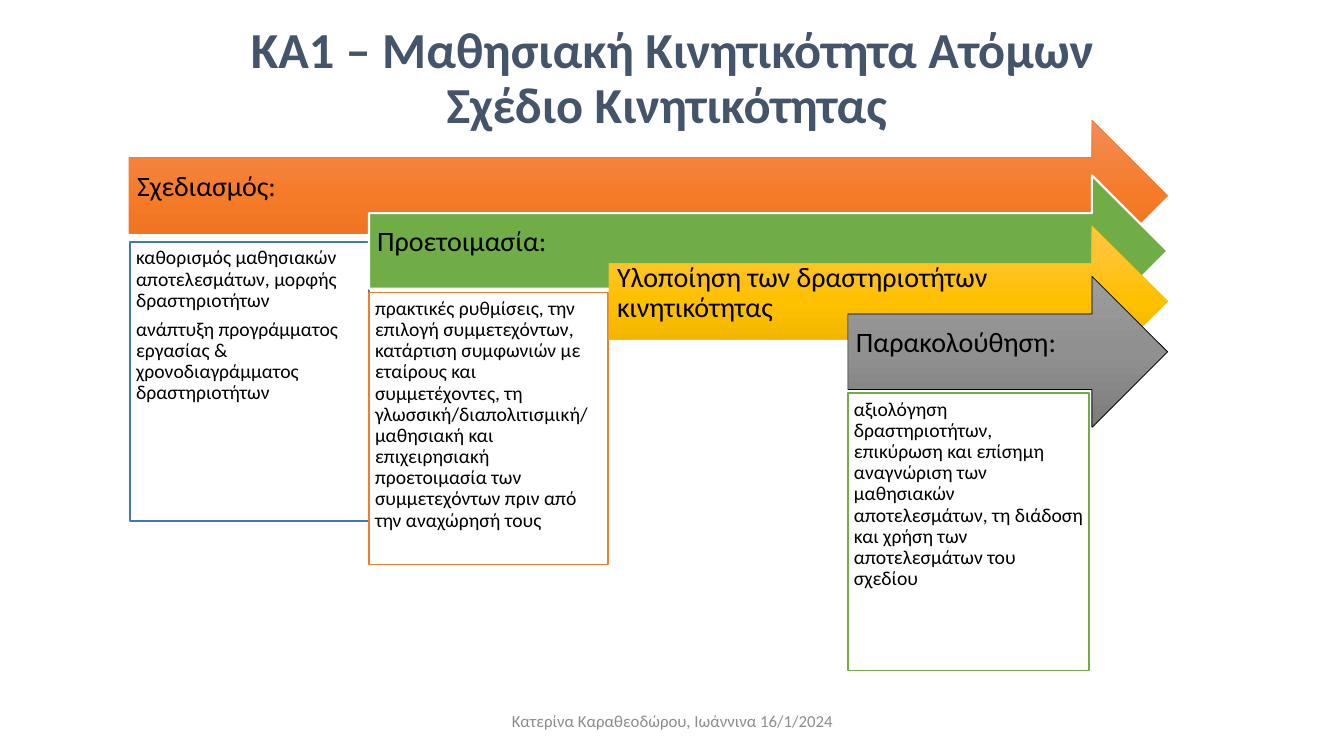
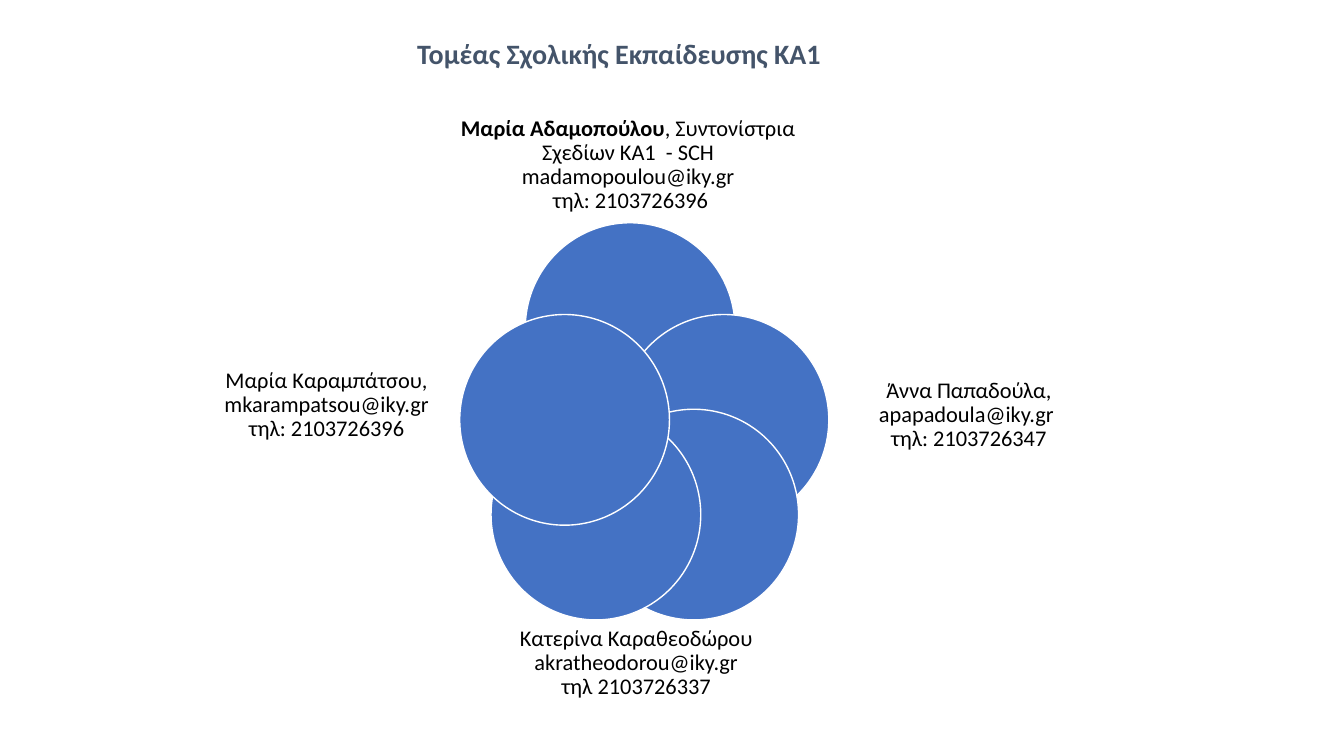
from copy import deepcopy

from pptx import Presentation
from pptx.dml.color import RGBColor
from pptx.enum.shapes import MSO_SHAPE as Shape
from pptx.enum.text import MSO_ANCHOR as Anchor, PP_ALIGN as Align
from pptx.oxml.ns import qn
from pptx.util import Emu, Pt

FONT = "Calibri"
BLACK, WHITE = "000000", "FFFFFF"
TITLE_COLOR, FOOTER_COLOR = "44546A", "8C8C8C"
BLUE, ORANGE, GREEN, GOLD = "4472C4", "ED7D31", "70AD47", "FFC000"

# Insets in px: left, top, right, bottom
TEXT_INSETS = (10, 5, 10, 5)
ARROW_INSETS = (8, 8, 28, 24)
DETAIL_INSETS = (6, 6, 5, 6)
NO_INSETS = (0, 0, 0, 0)

ARROW_RIGHT, ARROW_HEIGHT = 1158, 150
CIRCLE_SIZE = (208, 209)

# Left, top, fill (one colour or three gradient stops), line, line width, heading
PHASES = [
    (128, 119, ("F18C57", "F67B28", "E56C19"), ORANGE, 0.5, "Σχεδιασμός:"),
    (366, 174, (GREEN,), WHITE, 1.5, "Προετοιμασία:"),
    (604, 224, ("FFC64B", GOLD, "E3AB00"), GOLD, 0.5,
     "Υλοποίηση των δραστηριοτήτων κινητικότητας"),
    (841, 274, ("9D9D9D", "909090", "7C7C7C"), BLACK, 0.5, "Παρακολούθηση:"),
]

# Box under each phase: area, line colour, paragraphs
DETAILS = [
    ((129, 240, 237, 277), BLUE,
     ["καθορισμός μαθησιακών αποτελεσμάτων, μορφής δραστηριοτήτων",
      "ανάπτυξη προγράμματος εργασίας & χρονοδιαγράμματος δραστηριοτήτων"]),
    ((366, 290, 237, 270), ORANGE,
     ["πρακτικές ρυθμίσεις, την επιλογή συμμετεχόντων, κατάρτιση συμφωνιών με "
      "εταίρους και συμμετέχοντες, τη γλωσσική/διαπολιτισμική/ μαθησιακή και "
      "επιχειρησιακή προετοιμασία των συμμετεχόντων πριν από την αναχώρησή τους"]),
    None,
    ((841, 390, 239, 275), GREEN,
     ["αξιολόγηση δραστηριοτήτων, επικύρωση και επίσημη αναγνώριση των "
      "μαθησιακών αποτελεσμάτων, τη διάδοση και χρήση των αποτελεσμάτων του "
      "σχεδίου"]),
]

CIRCLES = [(521, 221), (614, 312), (584, 406), (487, 406), (456, 312)]

# Label area, bold name, remaining text
CONTACTS = [
    ((456, 94, 334, 140), "Μαρία Αδαμοπούλου",
     ", Συντονίστρια Σχεδίων ΚΑ1  - SCH madamopoulou@iky.gr\n τηλ: 2103726396"),
    ((853, 336, 216, 152), "",
     "Άννα Παπαδούλα, apapadoula@iky.gr \nτηλ: 2103726347"),
    ((470, 601, 322, 114), "",
     "Κατερίνα Καραθεοδώρου akratheodorou@iky.gr\nτηλ 2103726337"),
    ((216, 326, 216, 152), "",
     "Μαρία Καραμπάτσου, mkarampatsou@iky.gr τηλ: 2103726396"),
]


def px(value):
    """One hundred px make an inch."""
    return Emu(value * 9144)


def rgb(color):
    return RGBColor.from_string(color)


def add_text(para, text, size, color=BLACK, bold=False):
    """Add one run per line, with line breaks of the same size between them."""
    for index, line in enumerate(text.split("\n")):
        if index:
            para.add_line_break()
            para._p[-1].append(deepcopy(span._r.rPr))
        span = para.add_run()
        span.text = line
        font = span.font
        font.name, font.size, font.bold = FONT, Pt(size), bold
        font.color.rgb = rgb(color)


def set_frame(box, insets=TEXT_INSETS, anchor=Anchor.MIDDLE):
    frame = box.text_frame
    frame.word_wrap = True
    frame.vertical_anchor = anchor
    (frame.margin_left, frame.margin_top,
     frame.margin_right, frame.margin_bottom) = map(px, insets)
    return frame


def style_para(para, align=Align.LEFT, spacing=0.9):
    para.alignment = align
    para.line_spacing = spacing
    return para


def add_box(page, area, insets=TEXT_INSETS, spacing=0.9):
    """Centred text box; returns its paragraph."""
    box = page.shapes.add_textbox(*map(px, area))
    return style_para(set_frame(box, insets).paragraphs[0], Align.CENTER, spacing)


def add_title(page, area, text, size):
    add_text(add_box(page, area), text, size, TITLE_COLOR, True)


def set_fill(shape, colors):
    fill = shape.fill
    if len(colors) == 1:
        fill.solid()
        fill.fore_color.rgb = rgb(colors[0])
        return
    fill.gradient()
    fill.gradient_angle = 270
    stop_list = shape._element.spPr.find(".//" + qn("a:gsLst"))
    stop_list.insert(0, deepcopy(stop_list[0]))
    for stop, color, position in zip(fill.gradient_stops, colors, (0, 0.5, 1)):
        stop.color.rgb = rgb(color)
        stop.position = position


def add_figure(page, kind, area, colors, line, width=1):
    figure = page.shapes.add_shape(kind, *map(px, area))
    figure.shadow.inherit = False
    set_fill(figure, colors)
    figure.line.color.rgb = rgb(line)
    figure.line.width = Pt(width)
    return figure


def add_phase(page, left, top, colors, line, width, heading):
    area = (left, top, ARROW_RIGHT - left, ARROW_HEIGHT)
    arrow = add_figure(page, Shape.RIGHT_ARROW, area, colors, line, width)
    frame = set_frame(arrow, ARROW_INSETS)
    add_text(style_para(frame.paragraphs[0]), heading, 20)


def add_detail(page, area, line, texts):
    box = add_figure(page, Shape.RECTANGLE, area, (WHITE,), line)
    frame = set_frame(box, DETAIL_INSETS, Anchor.TOP)
    for index, text in enumerate(texts):
        para = frame.add_paragraph() if index else frame.paragraphs[0]
        style_para(para).space_after = Pt(5.5)
        add_text(para, text, 14)


def build_plan(page):
    add_title(page, (92, 21, 1150, 116),
              "ΚΑ1 – Μαθησιακή Κινητικότητα Ατόμων\nΣχέδιο Κινητικότητας ", 36)
    for phase, detail in zip(PHASES, DETAILS):
        add_phase(page, *phase)
        if detail:
            add_detail(page, *detail)
    # Footer
    footer = add_box(page, (442, 695, 450, 40), spacing=1.0)
    add_text(footer, "Κατερίνα Καραθεοδώρου, Ιωάννινα 16/1/2024", 12, FOOTER_COLOR)


def build_contacts(page):
    add_title(page, (111, 31, 1006, 48), "Τομέας Σχολικής Εκπαίδευσης KA1", 20)
    # Overlapping circles
    for corner in CIRCLES:
        add_figure(page, Shape.OVAL, corner + CIRCLE_SIZE, (BLUE,), WHITE)
    # Contact labels
    for area, name, text in CONTACTS:
        para = add_box(page, area, NO_INSETS)
        if name:
            add_text(para, name, 16, bold=True)
        add_text(para, text, 16)


def main():
    deck = Presentation()
    deck.slide_width, deck.slide_height = px(1333), px(750)
    for build in (build_plan, build_contacts):
        build(deck.slides.add_slide(deck.slide_layouts[6]))
    deck.save("out.pptx")


if __name__ == "__main__":
    main()
